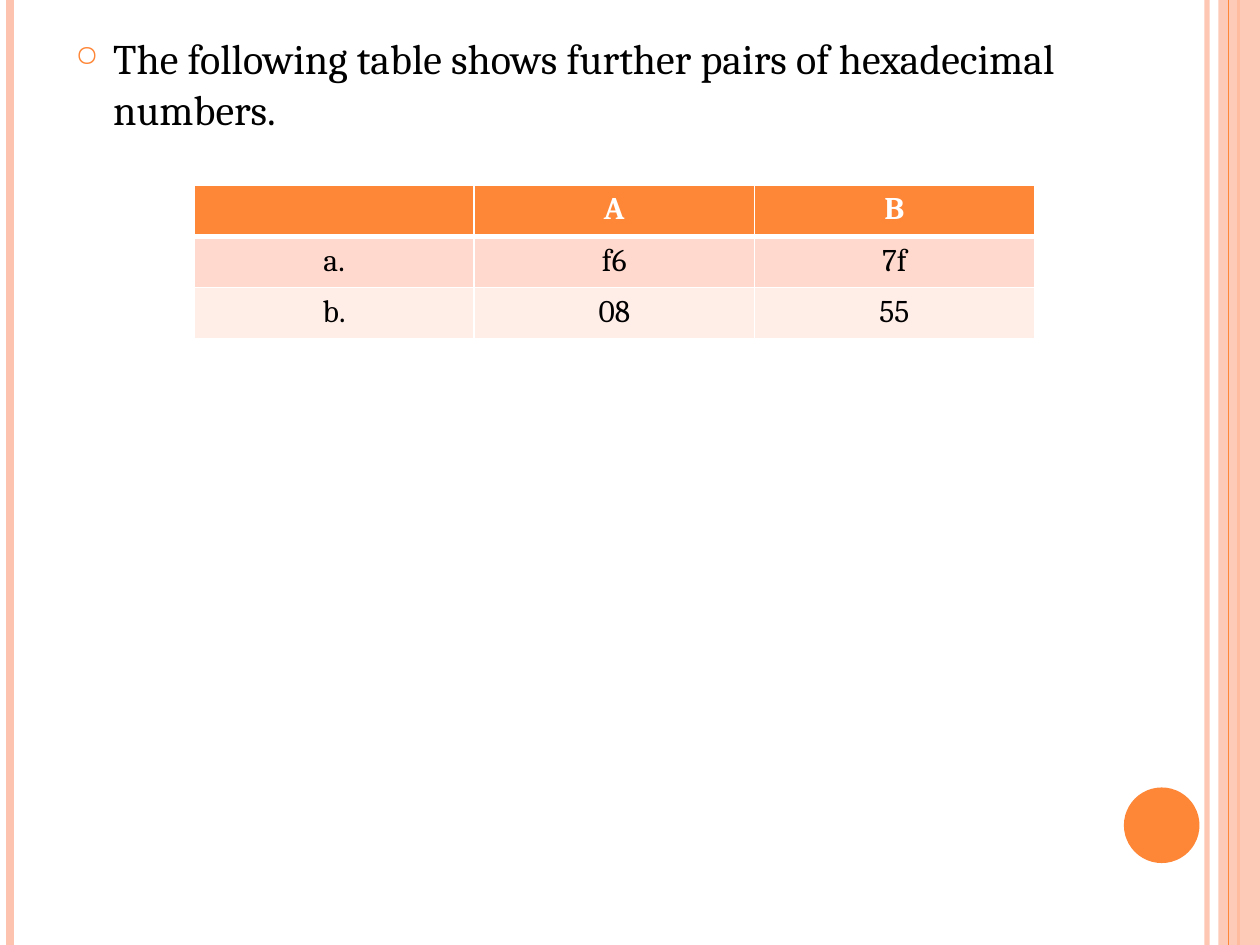
from dataclasses import dataclass

from lxml import etree
from pptx import Presentation
from pptx.dml.color import RGBColor
from pptx.enum.shapes import MSO_CONNECTOR, MSO_SHAPE
from pptx.enum.text import PP_ALIGN
from pptx.oxml.ns import qn
from pptx.util import Emu, Pt

STRAIGHT = MSO_CONNECTOR.STRAIGHT
RECTANGLE = MSO_SHAPE.RECTANGLE
OVAL = MSO_SHAPE.OVAL
CENTER = PP_ALIGN.CENTER

ORANGE = RGBColor(0xFE, 0x86, 0x37)
PEACH = RGBColor(0xFE, 0xC3, 0xAE)
BAND_DARK = RGBColor(0xFF, 0xD9, 0xCE)
BAND_LIGHT = RGBColor(0xFF, 0xED, 0xE8)
WHITE = RGBColor(0xFF, 0xFF, 0xFF)
BLACK = RGBColor(0, 0, 0)

FONT = "Cambria"
EMU_PER_PX = 9144
SLIDE_WIDTH, SLIDE_HEIGHT = 1000, 750


@dataclass(frozen=True)
class Stripe:
    x: int
    color: RGBColor
    weight: float
    opacity: int = 100


@dataclass(frozen=True)
class Panel:
    preset: int
    x: int
    y: int
    width: int
    height: int
    color: RGBColor
    opacity: int = 100


@dataclass(frozen=True)
class TableRow:
    texts: tuple[str, ...]
    fill: RGBColor
    color: RGBColor = BLACK
    bold: bool = False
    top: int = 1
    bottom: int = 1


DECORATION = (
    Stripe(958, PEACH, 3, 93),
    Stripe(8, PEACH, 4.5),
    Stripe(983, ORANGE, 1.5),
    Panel(RECTANGLE, 967, 0, 33, SLIDE_HEIGHT, PEACH, 87),
    Stripe(975, ORANGE, 0.75),
    Panel(OVAL, 892, 625, 60, 60, ORANGE),
)

HEX_PAIRS = (
    TableRow(("", "A", "B"), ORANGE, WHITE, bold=True, bottom=3),
    TableRow(("a.", "f6", "7f"), BAND_DARK, top=3),
    TableRow(("b.", "08", "55"), BAND_LIGHT),
)


def px(length: int) -> Emu:
    return Emu(length * EMU_PER_PX)


def set_opacity(element, percent: int) -> None:
    if percent < 100:
        color = next(element.iter(qn("a:srgbClr")))
        etree.SubElement(color, qn("a:alpha"), val=str(percent * 1000))


def add_run(paragraph, text: str, size: int, color: RGBColor, bold: bool = False) -> None:
    run = paragraph.add_run()
    run.text = text
    run.font.name = FONT
    run.font.size = Pt(size)
    run.font.bold = bold
    run.font.color.rgb = color


def draw_stripe(slide, stripe: Stripe) -> None:
    connector = slide.shapes.add_connector(
        STRAIGHT, px(stripe.x), 0, px(stripe.x), px(SLIDE_HEIGHT)
    )
    connector.line.color.rgb = stripe.color
    connector.line.width = Pt(stripe.weight)
    properties = connector._element.spPr
    set_opacity(properties, stripe.opacity)
    etree.SubElement(properties, qn("a:effectLst"))


def draw_panel(slide, panel: Panel) -> None:
    shape = slide.shapes.add_shape(
        panel.preset, px(panel.x), px(panel.y), px(panel.width), px(panel.height)
    )
    shape.shadow.inherit = False
    shape.fill.solid()
    shape.fill.fore_color.rgb = panel.color
    shape.line.fill.background()
    set_opacity(shape._element.spPr, panel.opacity)


def draw_statement(slide, text: str) -> None:
    frame = slide.shapes.add_textbox(px(50), px(21), px(817), px(687)).text_frame
    frame.word_wrap = True
    paragraph = frame.paragraphs[0]
    paragraph.space_before = Pt(6)
    properties = paragraph._p.get_or_add_pPr()
    properties.set("marL", str(px(30)))
    properties.set("indent", str(px(-30)))
    bullet_color = etree.SubElement(properties, qn("a:buClr"))
    etree.SubElement(bullet_color, qn("a:srgbClr"), val=str(ORANGE))
    etree.SubElement(properties, qn("a:buSzPct"), val="70000")
    etree.SubElement(properties, qn("a:buChar"), char="○")
    add_run(paragraph, text, 24, BLACK)


def add_border(cell, side: str, weight: int) -> None:
    border = etree.SubElement(
        cell._tc.get_or_add_tcPr(), qn(f"a:ln{side}"), w=str(Pt(weight))
    )
    fill = etree.SubElement(border, qn("a:solidFill"))
    etree.SubElement(fill, qn("a:srgbClr"), val=str(WHITE))


def draw_table(slide, rows: tuple[TableRow, ...]) -> None:
    column_count = len(rows[0].texts)
    table = slide.shapes.add_table(
        len(rows), column_count, px(154), px(147), px(667), px(122)
    ).table
    for row_index, row in enumerate(rows):
        borders = {"L": 1, "R": 1, "T": row.top, "B": row.bottom}
        for column_index, text in enumerate(row.texts):
            cell = table.cell(row_index, column_index)
            for side, weight in borders.items():
                add_border(cell, side, weight)
            cell.fill.solid()
            cell.fill.fore_color.rgb = row.fill
            if text:
                paragraph = cell.text_frame.paragraphs[0]
                paragraph.alignment = CENTER
                add_run(paragraph, text, 18, row.color, row.bold)


def main() -> None:
    presentation = Presentation()
    presentation.slide_width = px(SLIDE_WIDTH)
    presentation.slide_height = px(SLIDE_HEIGHT)
    slide = presentation.slides.add_slide(presentation.slide_layouts[6])
    for part in DECORATION:
        if isinstance(part, Stripe):
            draw_stripe(slide, part)
        else:
            draw_panel(slide, part)
    draw_statement(
        slide, "The following table shows further pairs of hexadecimal numbers."
    )
    draw_table(slide, HEX_PAIRS)
    presentation.save("out.pptx")


if __name__ == "__main__":
    main()
